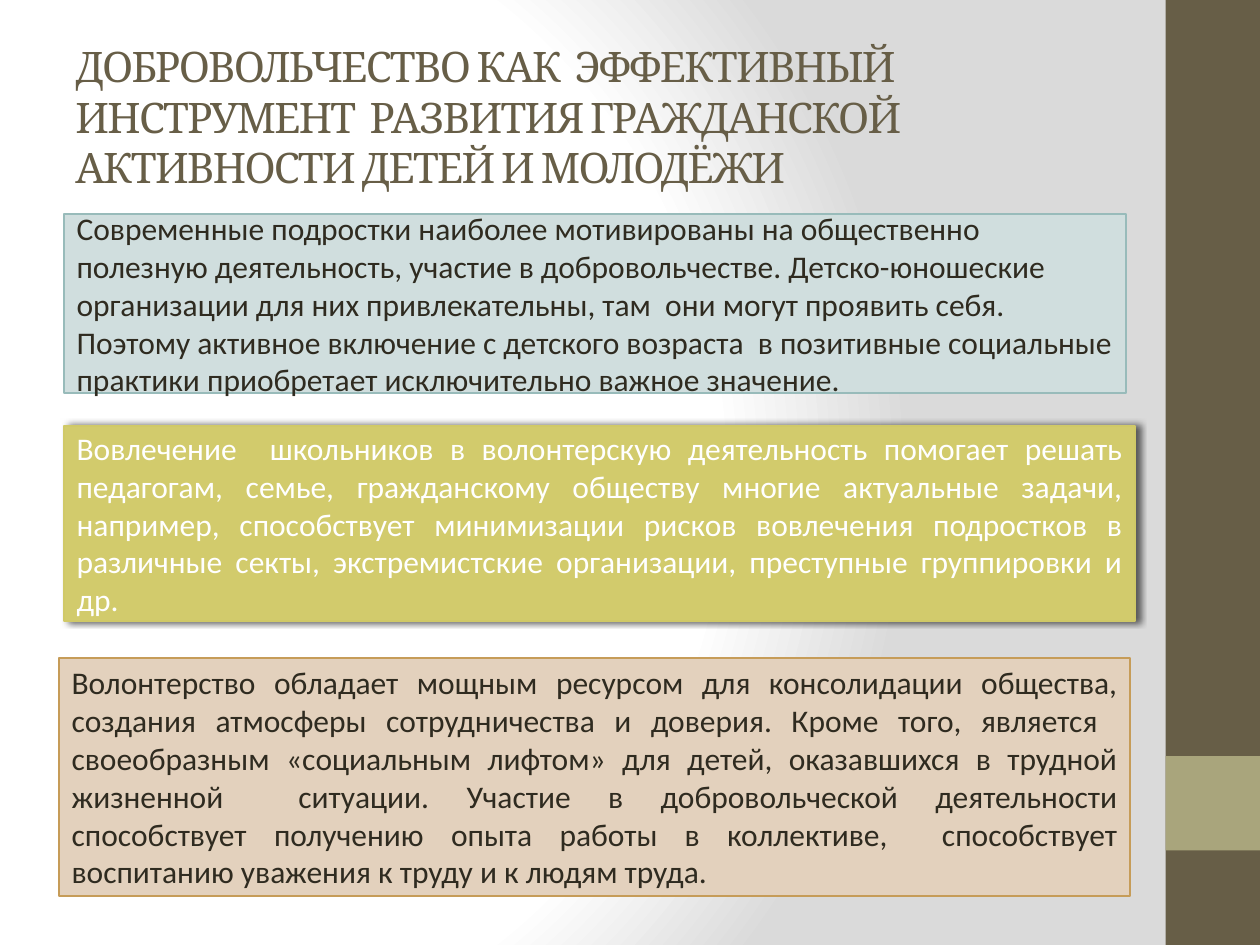
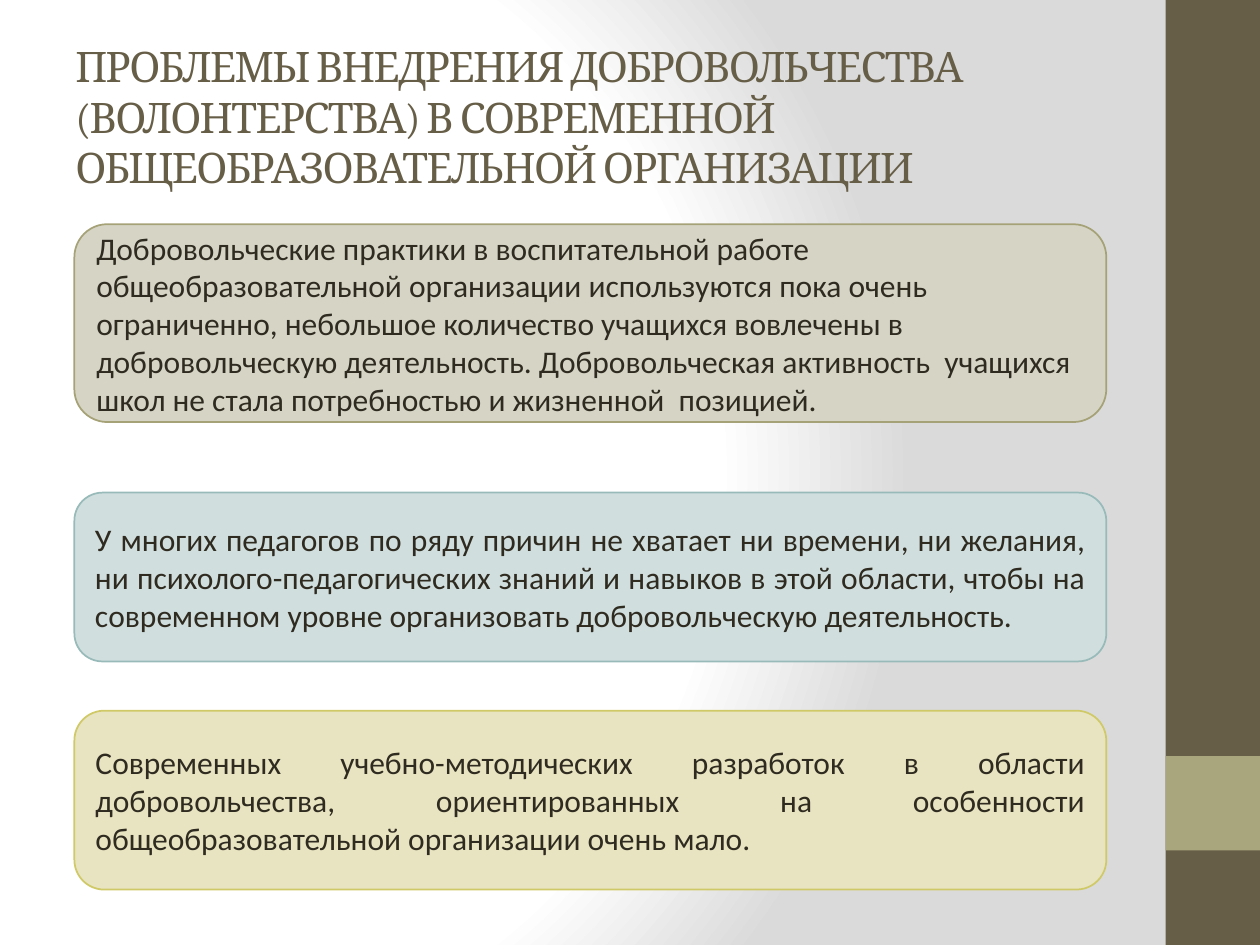
from pptx import Presentation
from pptx.dml.color import RGBColor
from pptx.enum.shapes import MSO_SHAPE as SHAPE
from pptx.enum.text import MSO_ANCHOR as ANCHOR, PP_ALIGN as ALIGN
from pptx.oxml import parse_xml
from pptx.oxml.ns import nsdecls
from pptx.util import Inches, Pt

BROWN = RGBColor(0x67, 0x5E, 0x47)
SAGE = RGBColor(0xA9, 0xA5, 0x7C)
INK = RGBColor(0x2F, 0x2B, 0x20)
WHITE = RGBColor(0xFF, 0xFF, 0xFF)
TEAL_FILL = RGBColor(0xD0, 0xDE, 0xDE)
TEAL_LINE = RGBColor(0x98, 0xBB, 0xBA)
OLIVE_FILL = RGBColor(0xD2, 0xCB, 0x6C)
OLIVE_LINE = RGBColor(0xD0, 0xC9, 0x67)
SAND_FILL = RGBColor(0xE3, 0xD1, 0xBD)
SAND_LINE = RGBColor(0xC6, 0x9C, 0x58)
STONE_FILL = RGBColor(0xD5, 0xD4, 0xC5)
STONE_LINE = RGBColor(0xA6, 0xA2, 0x78)
CREAM_FILL = RGBColor(0xE8, 0xE4, 0xC1)

TITLE_FONT = {"name": "Cambria", "size": Pt(24)}
BODY_FONT = {"name": "Calibri", "size": Pt(18)}

BACKGROUND = f"""<p:bg {nsdecls('p', 'a')}><p:bgPr><a:gradFill rotWithShape="1"><a:gsLst>
<a:gs pos="0"><a:srgbClr val="FFFFFF"/></a:gs>
<a:gs pos="75000"><a:srgbClr val="FFFFFF"/></a:gs>
<a:gs pos="100000"><a:srgbClr val="DADADA"/></a:gs></a:gsLst>
<a:path path="circle"><a:fillToRect l="20000" t="50000" r="100000" b="50000"/></a:path>
</a:gradFill><a:effectLst/></p:bgPr></p:bg>"""

SHADOW = f"""<a:effectLst {nsdecls('a')}><a:outerShdw blurRad="50800" dist="25400" dir="0">
<a:srgbClr val="000000"><a:alpha val="60000"/></a:srgbClr></a:outerShdw></a:effectLst>"""

BANDS = [(0, 7.5, BROWN), (6, 0.75, SAGE)]

SLIDES = [
    ("ДОБРОВОЛЬЧЕСТВО КАК  ЭФФЕКТИВНЫЙ ИНСТРУМЕНТ  РАЗВИТИЯ ГРАЖДАНСКОЙ АКТИВНОСТИ ДЕТЕЙ И МОЛОДЁЖИ",
     SHAPE.RECTANGLE, [
        ((0.51, 1.7, 8.43, 1.42), TEAL_FILL, TEAL_LINE, INK, ALIGN.LEFT, False,
         "Современные подростки наиболее мотивированы на общественно полезную деятельность, "
         "участие в добровольчестве. Детско-юношеские организации для них привлекательны, "
         "там  они могут проявить себя. Поэтому активное включение с детского возраста  "
         "в позитивные социальные практики приобретает исключительно важное значение."),
        ((0.51, 3.38, 8.5, 1.55), OLIVE_FILL, OLIVE_LINE, WHITE, ALIGN.JUSTIFY, True,
         "Вовлечение  школьников в волонтерскую деятельность помогает решать педагогам, семье, "
         "гражданскому обществу многие актуальные задачи, например, способствует минимизации "
         "рисков вовлечения подростков в различные секты, экстремистские организации, "
         "преступные группировки и др."),
        ((0.47, 5.22, 8.5, 1.89), SAND_FILL, SAND_LINE, INK, ALIGN.JUSTIFY, False,
         "Волонтерство обладает мощным ресурсом для консолидации общества, создания атмосферы "
         "сотрудничества и доверия. Кроме того, является  своеобразным «социальным лифтом» "
         "для детей, оказавшихся в трудной жизненной  ситуации. Участие в добровольческой "
         "деятельности способствует получению опыта работы в коллективе,  способствует "
         "воспитанию уважения к труду и к людям труда."),
     ]),
    ("ПРОБЛЕМЫ ВНЕДРЕНИЯ ДОБРОВОЛЬЧЕСТВА (ВОЛОНТЕРСТВА) В СОВРЕМЕННОЙ ОБЩЕОБРАЗОВАТЕЛЬНОЙ ОРГАНИЗАЦИИ",
     SHAPE.ROUNDED_RECTANGLE, [
        ((0.59, 1.78, 8.19, 1.57), STONE_FILL, STONE_LINE, INK, ALIGN.LEFT, False,
         "Добровольческие практики в воспитательной работе общеобразовательной организации "
         "используются пока очень ограниченно, небольшое количество учащихся вовлечены в "
         "добровольческую деятельность. Добровольческая активность  учащихся школ не стала "
         "потребностью и жизненной  позицией."),
        ((0.59, 3.91, 8.19, 1.34), TEAL_FILL, TEAL_LINE, INK, ALIGN.JUSTIFY, False,
         "У многих педагогов по ряду причин не хватает ни времени, ни желания, "
         "ни психолого-педагогических знаний и навыков в этой области, чтобы на современном "
         "уровне организовать добровольческую деятельность."),
        ((0.59, 5.64, 8.19, 1.42), CREAM_FILL, OLIVE_LINE, INK, ALIGN.JUSTIFY, False,
         "Современных учебно-методических разработок в области добровольчества, "
         "ориентированных на особенности общеобразовательной организации очень мало."),
     ]),
]


def add_box(s, kind, place, fill):
    sp = s.shapes.add_shape(kind, *map(Inches, place))
    sp.shadow.inherit = False
    sp.fill.solid()
    sp.fill.fore_color.rgb = fill
    return sp


def write(sp, text, font, color, align):
    tf = sp.text_frame
    tf.word_wrap = True
    tf.vertical_anchor = ANCHOR.MIDDLE
    p = tf.paragraphs[0]
    p.alignment = align
    r = p.add_run()
    r.text = text
    for key, value in font.items():
        setattr(r.font, key, value)
    r.font.color.rgb = color
    return r


prs = Presentation()
prs.slide_width, prs.slide_height = Inches(10), Inches(7.5)

for title, kind, boxes in SLIDES:
    s = prs.slides.add_slide(prs.slide_layouts[6])
    s.element.cSld.insert(0, parse_xml(BACKGROUND))
    for top, height, color in BANDS:
        band = add_box(s, SHAPE.RECTANGLE, (9.25, top, 0.75, height), color)
        band.line.fill.background()

    tb = s.shapes.add_textbox(*map(Inches, (0.5, 0.3, 8.33, 1.25)))
    r = write(tb, title, TITLE_FONT, BROWN, ALIGN.LEFT)
    r.font._element.set("spc", "-100")

    for place, fill, line, color, align, raised, text in boxes:
        sp = add_box(s, kind, place, fill)
        sp.line.color.rgb = line
        sp.line.width = Pt(1)
        if raised:
            effects = sp.element.spPr.find("{*}effectLst")
            sp.element.spPr.replace(effects, parse_xml(SHADOW))
        write(sp, text, BODY_FONT, color, align)

prs.save("out.pptx")
